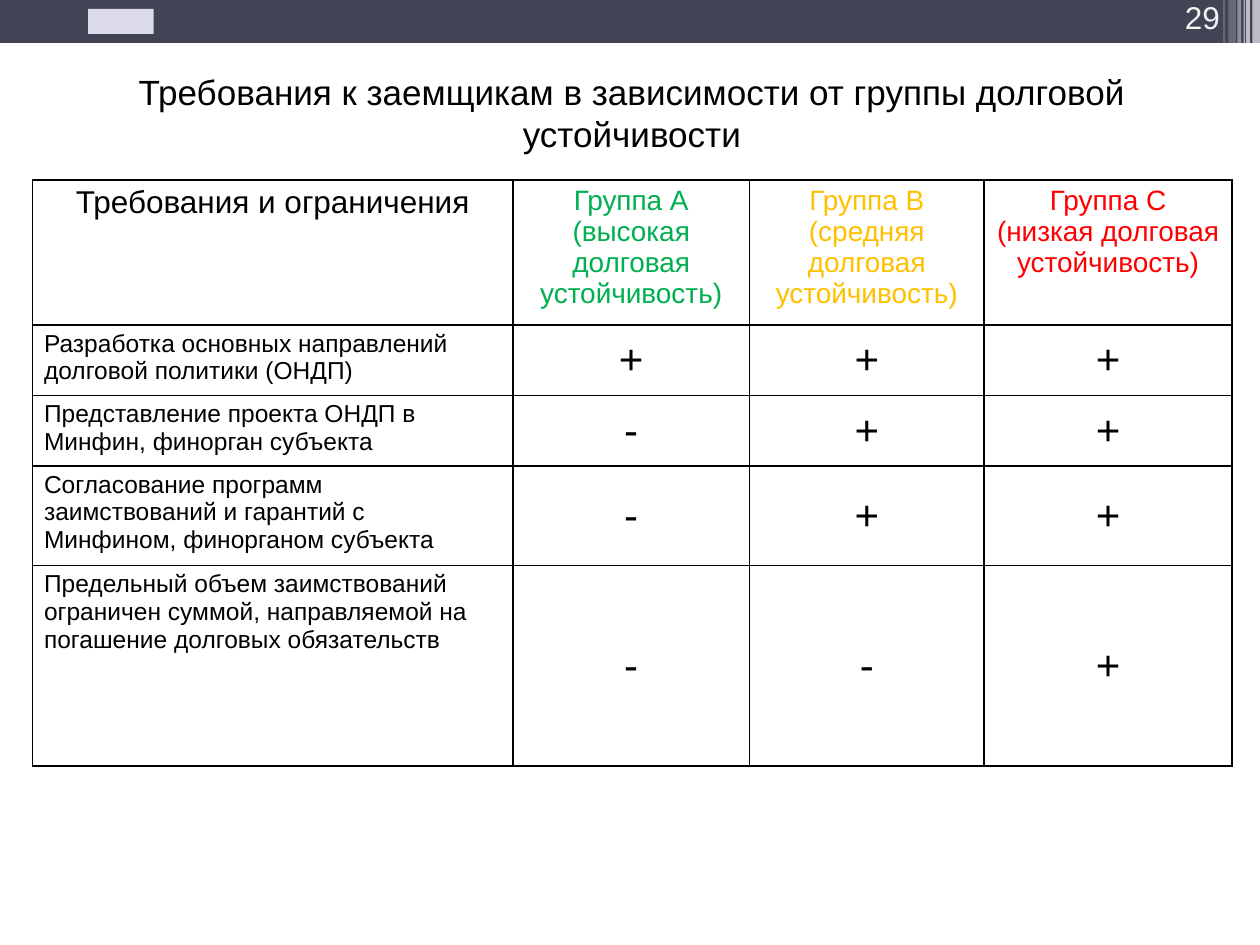
from lxml import etree
from pptx import Presentation
from pptx.dml.color import RGBColor
from pptx.enum.shapes import MSO_SHAPE
from pptx.enum.text import MSO_ANCHOR, PP_ALIGN
from pptx.oxml.ns import qn
from pptx.util import Inches, Pt

RECTANGLE = MSO_SHAPE.RECTANGLE
TOP, MIDDLE, BOTTOM = MSO_ANCHOR.TOP, MSO_ANCHOR.MIDDLE, MSO_ANCHOR.BOTTOM
LEFT, CENTER, RIGHT = PP_ALIGN.LEFT, PP_ALIGN.CENTER, PP_ALIGN.RIGHT

COLORS = {
    "bar": "424456", "white": "FFFFFF", "black": "000000", "emblem": "DBDBE9",
    "number": "F2F2F2", "high": "00B050", "medium": "FFC000", "low": "FF0000",
}
STRIPES = [
    (9.94, 0.06, 65), (9.89, 0.03, 65), (9.87, 0.01, 60),
    (9.82, 0.03, 40), (9.75, 0.06, 20), (9.71, 0.01, 30),
]
BAR_HEIGHT = 0.34
COLUMN_WIDTHS = [3.81, 1.88, 1.86, 1.97]
ROW_HEIGHTS = [1.15, 0.56, 0.56, 0.79, 1.59]
HEADERS = [
    ("Требования и ограничения", 18, "black"),
    ("Группа А\n(высокая долговая устойчивость)", 16, "high"),
    ("Группа В\n(средняя долговая устойчивость)", 16, "medium"),
    ("Группа С\n(низкая долговая устойчивость)", 16, "low"),
]
REQUIREMENTS = [
    ("Разработка основных направлений долговой политики (ОНДП)", "+++"),
    ("Представление проекта ОНДП в Минфин, финорган субъекта", "-++"),
    ("Согласование программ заимствований и гарантий с Минфином, финорганом субъекта", "-++"),
    ("Предельный объем заимствований ограничен суммой, направляемой на погашение "
     "долговых обязательств", "--+"),
]


def rgb(name):
    """Return the named colour."""
    return RGBColor.from_string(COLORS[name])


def write_text(text_frame, text, size, color, alignment):
    """Fill a text frame and format all of its runs."""
    text_frame.text = text
    text_frame.word_wrap = True
    for paragraph in text_frame.paragraphs:
        paragraph.alignment = alignment
        for run in paragraph.runs:
            run.font.name = "Arial"
            run.font.size = Pt(size)
            run.font.color.rgb = rgb(color)


def add_block(slide, left, top, width, height, color, opacity=100):
    """Add a plain rectangle with an optional opacity in percent."""
    shape = slide.shapes.add_shape(
        RECTANGLE, Inches(left), Inches(top), Inches(width), Inches(height))
    shape.shadow.inherit = False
    shape.fill.solid()
    shape.fill.fore_color.rgb = rgb(color)
    shape.line.fill.background()
    if opacity < 100:
        color_element = shape.fill._xPr.find(".//" + qn("a:srgbClr"))
        etree.SubElement(color_element, qn("a:alpha"), val=str(opacity * 1000))


def add_top_bar(slide):
    """Add the dark bar with its stripes, emblem block and slide number."""
    add_block(slide, 0, 0, 10, BAR_HEIGHT, "bar")
    for left, width, opacity in STRIPES:
        add_block(slide, left, 0, width, BAR_HEIGHT, "white", opacity)
    add_block(slide, 0.7, 0.07, 0.52, 0.2, "emblem")
    number = slide.shapes.add_textbox(Inches(8.99), 0, Inches(0.79), Inches(0.33))
    write_text(number.text_frame, "29", 18, "number", RIGHT)
    number.text_frame.vertical_anchor = BOTTOM


def set_title(slide, text):
    """Place and format the title placeholder."""
    title = slide.shapes.title
    title.left, title.top = Inches(0.17), Inches(0.55)
    title.width, title.height = Inches(9.69), Inches(0.68)
    write_text(title.text_frame, text, 20, "black", CENTER)
    title.text_frame.vertical_anchor = MIDDLE


def set_border(cell, side, width):
    """Draw one black border of a cell."""
    line = etree.SubElement(cell._tc.get_or_add_tcPr(), qn("a:" + side), w=str(Pt(width)))
    fill = etree.SubElement(line, qn("a:solidFill"))
    etree.SubElement(fill, qn("a:srgbClr"), val=COLORS["black"])


def format_cell(cell, text, size, color, alignment, anchor):
    """Write a cell and set its borders, margins and fill."""
    for side in ("lnL", "lnR", "lnT", "lnB"):
        set_border(cell, side, 1)
    cell.fill.solid()
    cell.fill.fore_color.rgb = rgb("white")
    cell.margin_left = cell.margin_right = Inches(0.09)
    cell.margin_top = cell.margin_bottom = Inches(0.04)
    cell.vertical_anchor = anchor
    write_text(cell.text_frame, text, size, color, alignment)


def add_requirements_table(slide):
    """Add the table of requirements by debt sustainability group."""
    table = slide.shapes.add_table(
        len(ROW_HEIGHTS), len(COLUMN_WIDTHS), Inches(0.26), Inches(1.43),
        Inches(sum(COLUMN_WIDTHS)), Inches(sum(ROW_HEIGHTS))).table
    for column, width in zip(table.columns, COLUMN_WIDTHS):
        column.width = Inches(width)
    for row, height in zip(table.rows, ROW_HEIGHTS):
        row.height = Inches(height)
    for column, (text, size, color) in enumerate(HEADERS):
        format_cell(table.cell(0, column), text, size, color, CENTER, TOP)
    for row, (requirement, marks) in enumerate(REQUIREMENTS, 1):
        format_cell(table.cell(row, 0), requirement, 14, "black", LEFT, TOP)
        for column, mark in enumerate(marks, 1):
            format_cell(table.cell(row, column), mark, 24, "black", CENTER, MIDDLE)


def main():
    """Build and save the slide."""
    presentation = Presentation()
    presentation.slide_width, presentation.slide_height = Inches(10), Inches(7.5)
    slide = presentation.slides.add_slide(presentation.slide_layouts[5])
    add_top_bar(slide)
    set_title(slide, "Требования к заемщикам в зависимости от группы долговой устойчивости")
    add_requirements_table(slide)
    presentation.save("out.pptx")


if __name__ == "__main__":
    main()
